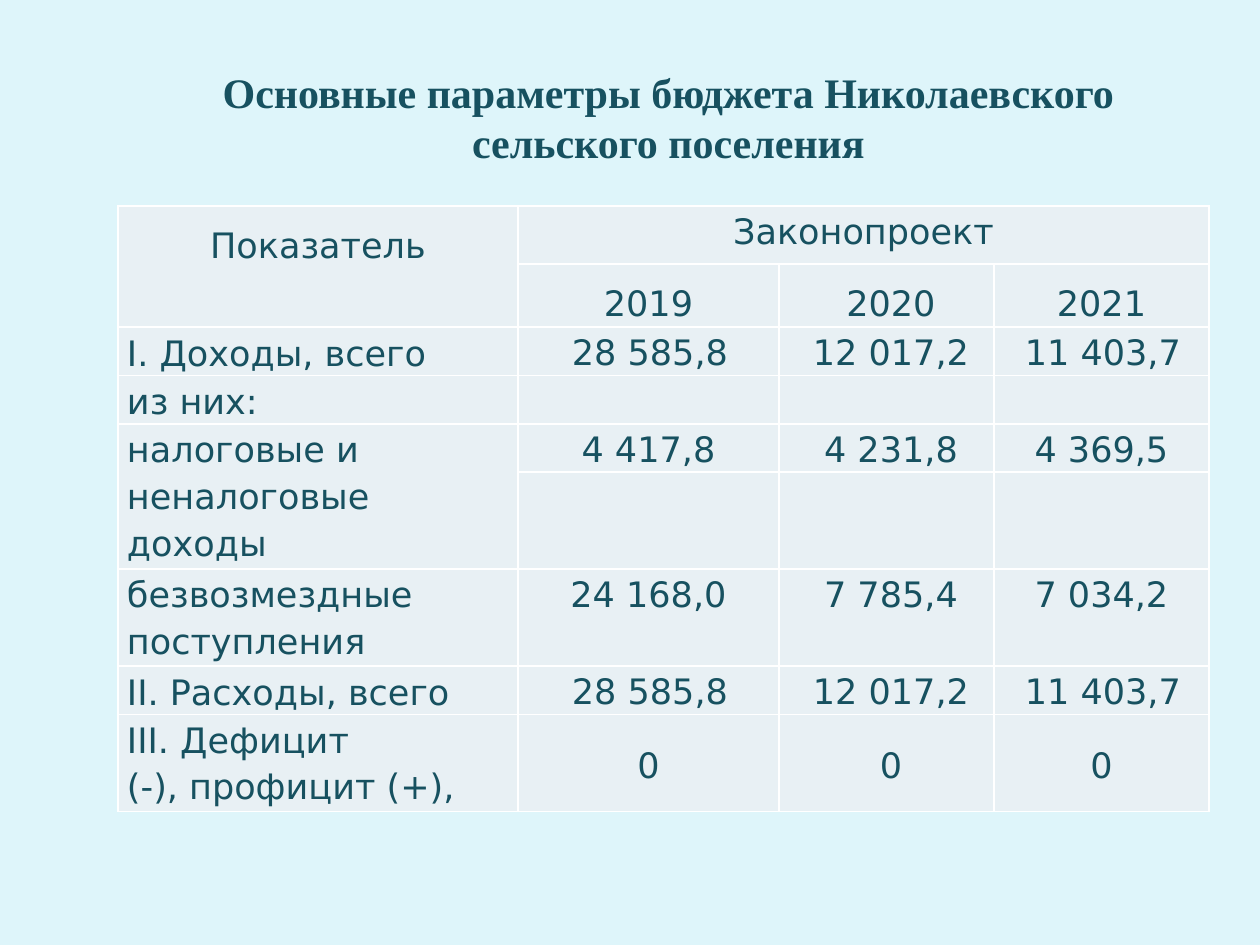
import pptx
import pptx.dml.color
import pptx.enum.text
import pptx.oxml
import pptx.util

PX = 914400 // 126
COLORS = {"back": "DEF5FA", "text": "175160", "cell": "E8F0F4", "line": "FFFFFF"}
ALIGN = pptx.enum.text.PP_ALIGN
ANCHOR = pptx.enum.text.MSO_ANCHOR
TOP, MID = ANCHOR.TOP, ANCHOR.MIDDLE
NS = 'xmlns:a="http://schemas.openxmlformats.org/drawingml/2006/main"'


def style(para, font, size):
    para.font.name = font
    para.font.size = pptx.util.Pt(size)
    para.font.color.rgb = pptx.dml.color.RGBColor.from_string(COLORS["text"])


def border(cell):
    """Draw a thin line on all four sides of the cell, below its fill in the XML order."""
    props = cell._tc.get_or_add_tcPr()
    for spot, side in enumerate(("lnL", "lnR", "lnT", "lnB")):
        line = pptx.oxml.parse_xml(
            f'<a:{side} {NS} w="12700"><a:solidFill>'
            f'<a:srgbClr val="{COLORS["line"]}"/></a:solidFill></a:{side}>')
        props.insert(spot, line)


deck = pptx.Presentation()
deck.slide_width, deck.slide_height = pptx.util.Inches(10), pptx.util.Inches(7.5)
slide = deck.slides.add_slide(deck.slide_layouts[6])
slide.background.fill.solid()
slide.background.fill.fore_color.rgb = pptx.dml.color.RGBColor.from_string(COLORS["back"])

title = slide.shapes.add_textbox(137 * PX, 59 * PX, 1063 * PX, 115 * PX).text_frame
title.word_wrap = True
title.vertical_anchor = MID
head = title.paragraphs[0]
head.text = "Основные параметры бюджета Николаевского сельского поселения"
head.alignment = ALIGN.CENTER
head.font.bold = True
style(head, "Times New Roman", 24)

# height, line spacing, indent of the outer numbers, label anchor, number anchor, cells
rows = [
    (58, 1.15, 0, TOP, TOP, ["Показатель", "Законопроект", "", ""]),
    (63, 1.5, 0, TOP, TOP, ["", "2019", "2020", "2021"]),
    (48, 1.15, 3, MID, TOP, ["I. Доходы, всего", "28 585,8", "12 017,2", "11 403,7"]),
    (48, 1.15, 0, MID, TOP, ["из них:", "", "", ""]),
    (48, 1.15, -9, TOP, TOP,
     ["налоговые и неналоговые доходы", "4 417,8", "4 231,8", "4 369,5"]),
    (97, 1.15, 0, TOP, TOP, ["", "", "", ""]),
    (97, 1.15, -9, TOP, TOP,
     ["безвозмездные поступления", "24 168,0", "7 785,4", "7 034,2"]),
    (48, 1.15, 3, MID, TOP, ["II. Расходы, всего", "28 585,8", "12 017,2", "11 403,7"]),
    (97, 1.15, 0, TOP, MID, ["III. Дефицит\n(-), профицит (+),", "0", "0", "0"]),
]
widths = [400, 261, 215, 215]
high = sum(row[0] for row in rows)
table = slide.shapes.add_table(
    len(rows), len(widths), 118 * PX, 206 * PX, sum(widths) * PX, high * PX).table
for col, width in zip(table.columns, widths):
    col.width = width * PX

for r, (height, space, shift, left, right, texts) in enumerate(rows):
    table.rows[r].height = height * PX
    for c, text in enumerate(texts):
        cell = table.cell(r, c)
        cell.fill.solid()
        cell.fill.fore_color.rgb = pptx.dml.color.RGBColor.from_string(COLORS["cell"])
        border(cell)
        cell.margin_left = cell.margin_right = 9 * PX
        cell.margin_top = cell.margin_bottom = 0
        cell.vertical_anchor = right if c else left
        cell.text = text
        for para in cell.text_frame.paragraphs:
            style(para, "DejaVu Sans", 20)
            para.line_spacing = space
            para.alignment = ALIGN.CENTER if c or r < 2 else ALIGN.LEFT
            if c and r and text:
                indent = 9 if c == 2 else shift
                para._p.get_or_add_pPr().set("indent", str(indent * PX))

corner = table.cell(0, 0).text_frame.paragraphs[0]
corner.line_spacing = 1.5
corner._p.get_or_add_pPr().set("indent", str(-9 * PX))

for first, last in (((0, 0), (1, 0)), ((0, 1), (0, 3)), ((4, 0), (5, 0))):
    table.cell(*first).merge(table.cell(*last))

deck.save("out.pptx")
